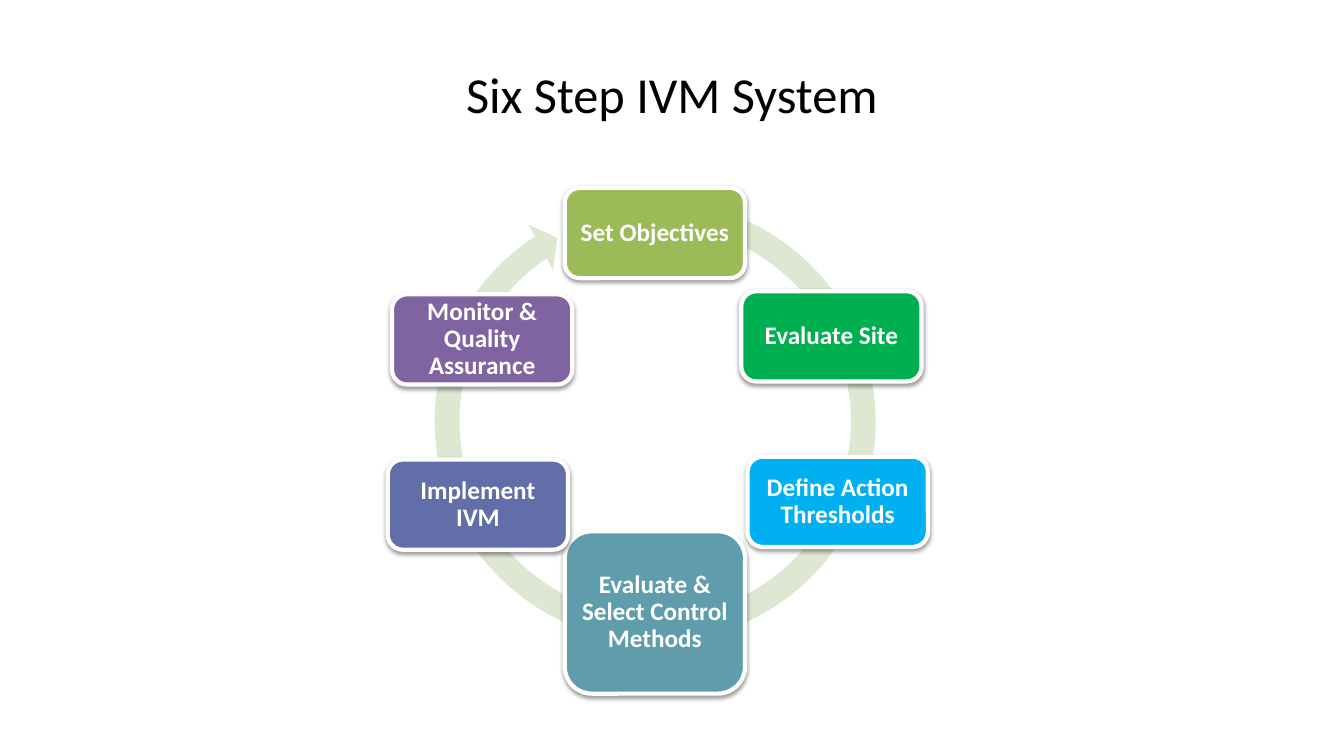
from dataclasses import dataclass

from lxml import etree
from pptx import Presentation
from pptx.dml.color import RGBColor
from pptx.enum import shapes, text
from pptx.oxml import ns
from pptx.util import Pt


@dataclass(frozen=True)
class Theme:
    font: str = "Calibri"
    title_size: int = 36
    step_size: int = 18
    ink: str = "000000"
    light: str = "FFFFFF"
    ring: str = "DEE7D1"


STEP_WIDTH, STEP_HEIGHT = 128.8, 64.5
RING_BOX = (301, 133.9, 334, 334)
RING_ADJUSTMENTS = (0.053, 3.126, 142.009, 171.43, 0.055)

# label, fill, left, top, height
STEPS = [
    ("Set Objectives", "9BBB59", 403.4, 134.2, STEP_HEIGHT),
    ("Evaluate Site", "00B050", 529.5, 208, STEP_HEIGHT),
    ("Define Action Thresholds", "00B0F0", 534, 326.2, STEP_HEIGHT),
    ("Evaluate & Select Control Methods", "5F9DAC", 403.4, 379.5, 116),
    ("Implement IVM", "626EA7", 277, 328.2, STEP_HEIGHT),
    ("Monitor & Quality Assurance", "8064A2", 280, 210.2, STEP_HEIGHT),
]


def set_all(obj, values):
    for name, value in values.items():
        setattr(obj, name, value)


class CycleSlide:
    def __init__(self, prs, theme):
        self.theme = theme
        self.slide = prs.slides.add_slide(prs.slide_layouts[5])

    def label(self, sp, content, size, color, bold, inset, spacing):
        tf = sp.text_frame
        set_all(tf, {
            "text": content,
            "word_wrap": True,
            "auto_size": text.MSO_AUTO_SIZE.NONE,
            "vertical_anchor": text.MSO_ANCHOR.MIDDLE,
            **{f"margin_{side}": Pt(inset) for side in ("left", "top", "right", "bottom")},
        })
        p = tf.paragraphs[0]
        set_all(p, {"alignment": text.PP_ALIGN.CENTER, "line_spacing": spacing})
        font = p.runs[0].font
        set_all(font, {"name": self.theme.font, "size": Pt(size), "bold": bold})
        font.color.rgb = RGBColor.from_string(color)

    def title(self, content, box):
        sp = self.slide.shapes.title
        set_all(sp, dict(zip(("left", "top", "width", "height"), map(Pt, box))))
        self.label(sp, content, self.theme.title_size, self.theme.ink, False, 5, 1.0)

    def shape(self, kind, box, fill):
        sp = self.slide.shapes.add_shape(kind, *map(Pt, box))
        sp.shadow.inherit = False
        sp.fill.solid()
        sp.fill.fore_color.rgb = RGBColor.from_string(fill)
        return sp

    def ring(self, box, adjustments):
        sp = self.shape(shapes.MSO_SHAPE.CIRCULAR_ARROW, box, self.theme.ring)
        sp.line.fill.background()
        for i, value in enumerate(adjustments):
            sp.adjustments[i] = value

    def step(self, name, fill, left, top, height):
        box = (left, top, STEP_WIDTH, height)
        sp = self.shape(shapes.MSO_SHAPE.ROUNDED_RECTANGLE, box, fill)
        sp.line.color.rgb = RGBColor.from_string(self.theme.light)
        sp.line.width = Pt(3)
        self.drop_shadow(sp)
        self.label(sp, name, self.theme.step_size, self.theme.light, True, 5, 0.9)

    def drop_shadow(self, sp):
        effects = sp._element.spPr.find(ns.qn("a:effectLst"))
        shadow = etree.SubElement(effects, ns.qn("a:outerShdw"), {
            "blurRad": str(Pt(3.1)), "dist": str(Pt(1.6)),
            "dir": "5400000", "rotWithShape": "0",
        })
        color = etree.SubElement(shadow, ns.qn("a:srgbClr"), val=self.theme.ink)
        etree.SubElement(color, ns.qn("a:alpha"), val="38000")


def main():
    prs = Presentation()
    set_all(prs, {"slide_width": Pt(960), "slide_height": Pt(540)})
    cycle = CycleSlide(prs, Theme())
    cycle.title("Six Step IVM System", (48, 21.6, 864, 90))
    cycle.ring(RING_BOX, RING_ADJUSTMENTS)
    for step in STEPS:
        cycle.step(*step)
    prs.save("out.pptx")


if __name__ == "__main__":
    main()
